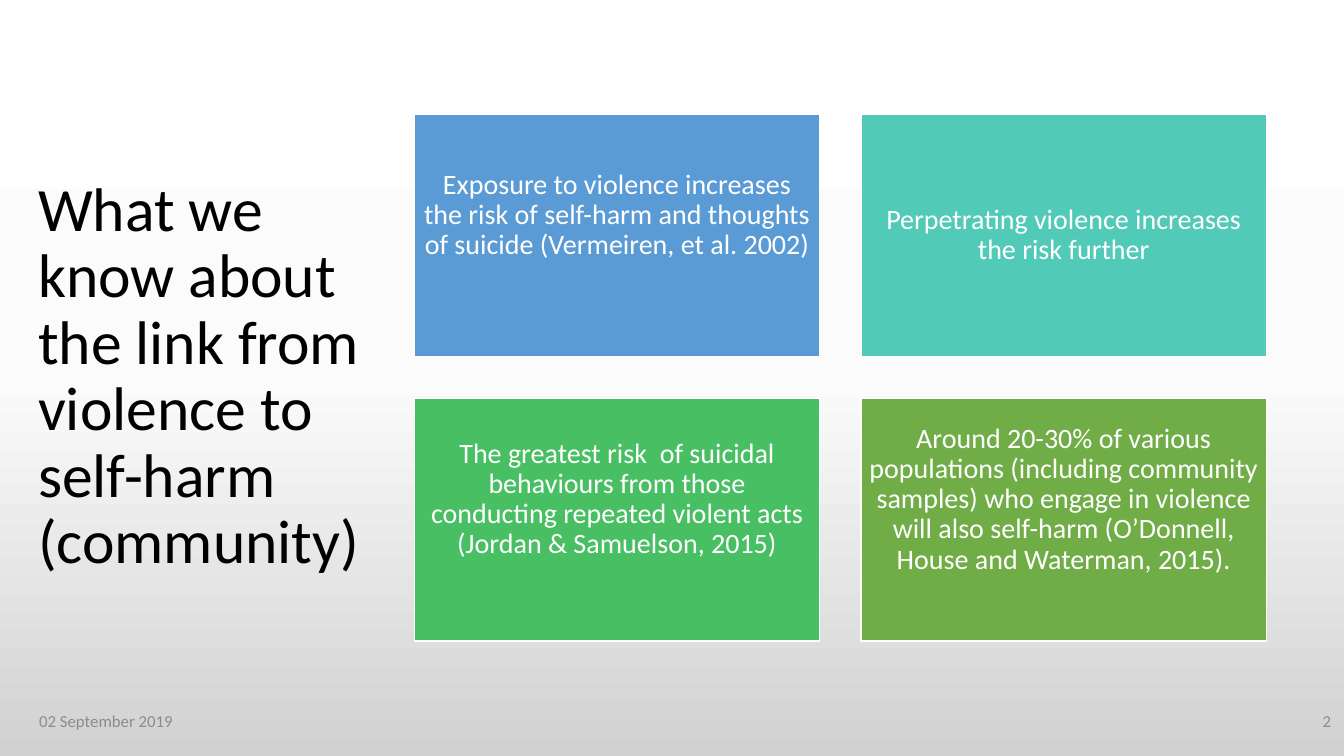
import copy

import pptx
import pptx.dml.color
import pptx.enum.shapes
import pptx.enum.text
import pptx.util
from pptx.util import Inches

COLORS = {
    "white": "FFFFFF", "black": "000000", "footer": "8C8C8C",
    "middle": "FBFBFB", "bottom": "D1D1D1",
    "blue": "5B9BD5", "teal": "52CAB8", "green": "49BF64", "olive": "70AD47",
}
ALIGN = pptx.enum.text.PP_ALIGN


def color(name):
    return pptx.dml.color.RGBColor.from_string(COLORS[name])


def write(shape, text, size, color_name, alignment, line_spacing=1.0):
    frame = shape.text_frame
    frame.word_wrap = True
    frame.vertical_anchor = pptx.enum.text.MSO_ANCHOR.MIDDLE
    paragraph = frame.paragraphs[0]
    paragraph.alignment = alignment
    paragraph.line_spacing = line_spacing
    run = paragraph.add_run()
    run.text = text
    run.font.name = "Calibri"
    run.font.size = pptx.util.Pt(size)
    run.font.color.rgb = color(color_name)


presentation = pptx.Presentation()
presentation.slide_width = Inches(13.33)
presentation.slide_height = Inches(7.5)
slide = presentation.slides.add_slide(presentation.slide_layouts[6])

# Background: three-stop gradient running from top to bottom
background = slide.background.fill
background.gradient()
background.gradient_angle = 270
stop_list = slide.element.xpath(".//a:gsLst")[0]
stop_list.insert(1, copy.deepcopy(stop_list[0]))
stops = [(0, "white"), (0.5, "middle"), (1, "bottom")]
for stop, (position, name) in zip(background.gradient_stops, stops):
    stop.position = position
    stop.color.rgb = color(name)

# Title, date and slide number
labels = [
    ((0.28, 1.23, 3.84, 5.03),
     "What we know about the link from violence to self-harm  (community)",
     44, "black", ALIGN.LEFT, 0.9),
    ((0.29, 6.95, 3, 0.4), "02 September 2019", 12, "footer", ALIGN.LEFT, 1.0),
    ((11.63, 6.95, 1.67, 0.4), "2", 12, "footer", ALIGN.RIGHT, 1.0),
]
for box, *style in labels:
    label = slide.shapes.add_textbox(*map(Inches, box))
    write(label, *style)

# Two-by-two grid of cards; a larger bottom inset raises the text
CARD_WIDTH, CARD_HEIGHT = 4.02, 2.41
LEFT, TOP = 4.11, 1.13
COLUMN_STEP, ROW_STEP = 4.43, 2.82
cards = [
    ("blue", 0.48, "Exposure to violence increases the risk of self-harm and "
     "thoughts of suicide (Vermeiren, et al. 2002)"),
    ("teal", 0.08, "Perpetrating violence increases the risk further"),
    ("green", 0.48, "The greatest risk  of suicidal behaviours from those "
     "conducting repeated violent acts (Jordan & Samuelson, 2015)"),
    ("olive", 0.48, "Around 20-30% of various populations (including community "
     "samples) who engage in violence will also self-harm (O’Donnell, "
     "House and Waterman, 2015)."),
]
for index, (fill_name, bottom_inset, text) in enumerate(cards):
    row, column = divmod(index, 2)
    card = slide.shapes.add_shape(
        pptx.enum.shapes.MSO_SHAPE.RECTANGLE,
        Inches(LEFT + column * COLUMN_STEP), Inches(TOP + row * ROW_STEP),
        Inches(CARD_WIDTH), Inches(CARD_HEIGHT))
    card.shadow.inherit = False
    card.fill.solid()
    card.fill.fore_color.rgb = color(fill_name)
    card.line.color.rgb = color("white")
    card.line.width = pptx.util.Pt(1)
    frame = card.text_frame
    frame.margin_left = frame.margin_right = frame.margin_top = Inches(0.08)
    frame.margin_bottom = Inches(bottom_inset)
    write(card, text, 20, "white", ALIGN.CENTER, 0.9)

presentation.save("out.pptx")
